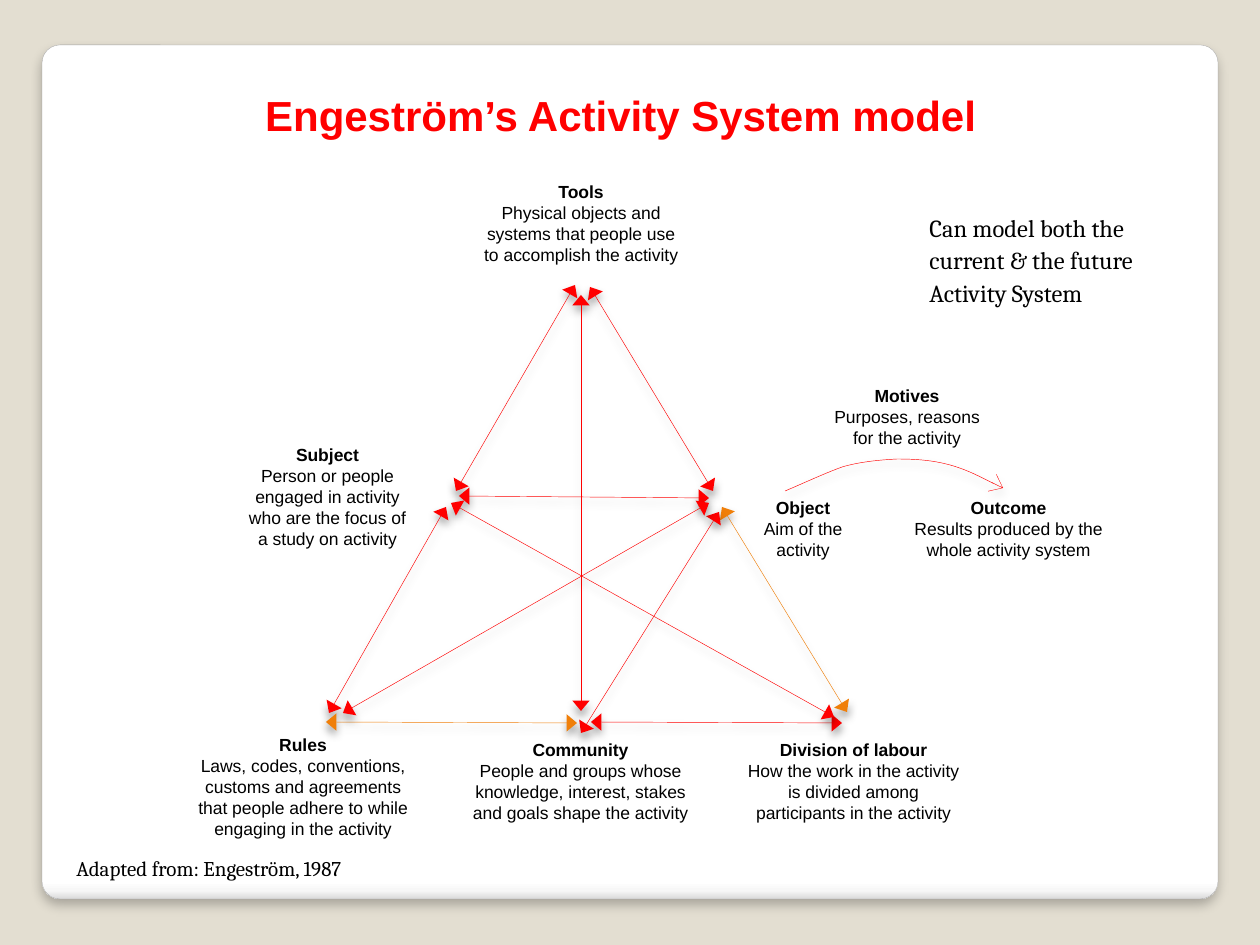
from typing import NamedTuple

from lxml import etree
from pptx import Presentation
from pptx.dml.color import RGBColor
from pptx.enum.shapes import MSO_CONNECTOR, MSO_SHAPE
from pptx.enum.text import MSO_ANCHOR, MSO_AUTO_SIZE, PP_ALIGN
from pptx.oxml.ns import qn
from pptx.util import Emu, Pt

STRAIGHT = MSO_CONNECTOR.STRAIGHT
ROUNDED = MSO_SHAPE.ROUNDED_RECTANGLE
TOP, BOTTOM = MSO_ANCHOR.TOP, MSO_ANCHOR.BOTTOM
GROW, FIXED = MSO_AUTO_SIZE.SHAPE_TO_FIT_TEXT, MSO_AUTO_SIZE.NONE
LEFT, CENTER = PP_ALIGN.LEFT, PP_ALIGN.CENTER

EMU_PER_PX = 914400 / 126
RED, ORANGE, BLACK = "FF0000", "F07F09", "000000"


class Area(NamedTuple):
    left: int
    top: int
    width: int
    height: int


class Label(NamedTuple):
    heading: str
    detail: str
    area: Area


class Link(NamedTuple):
    start: tuple[int, int]
    end: tuple[int, int]
    color: str = RED


LABELS = [
    Label("Subject", "Person or people engaged in activity who are the focus of a study on activity",
          Area(233, 438, 189, 111)),
    Label("Tools", "Physical objects and systems that people use to accomplish the activity",
          Area(470, 175, 222, 91)),
    Label("Object", "Aim of the activity", Area(730, 491, 146, 77)),
    Label("Outcome", "Results produced by the whole activity system", Area(901, 491, 215, 72)),
    Label("Division of labour",
          "How the work in the activity is divided among participants in the activity",
          Area(733, 733, 241, 91)),
    Label("Community",
          "People and groups whose knowledge, interest, stakes and goals shape the activity",
          Area(456, 733, 249, 91)),
    Label("Rules",
          "Laws, codes, conventions, customs and agreements that people adhere to while "
          "engaging in the activity",
          Area(184, 728, 238, 118)),
    Label("Motives", "Purposes, reasons for the activity", Area(811, 379, 192, 72)),
]

LINKS = [
    Link((575, 285), (456, 491)),
    Link((446, 507), (329, 713)),
    Link((590, 287), (713, 491)),
    Link((722, 507), (847, 712), ORANGE),
    Link((591, 722), (842, 723)),
    Link((719, 512), (581, 733)),
    Link((326, 722), (577, 723), ORANGE),
    Link((459, 496), (709, 498)),
    Link((581, 295), (581, 711)),
    Link((709, 503), (343, 713)),
    Link((451, 503), (834, 717)),
]

MOTIVE_CURVE = [
    (785, 491), (804, 483), (823, 474), (842, 467), (859, 462), (878, 460), (897, 459),
    (915, 459), (932, 460), (950, 465), (968, 470), (992, 483), (1003, 488),
]

CARD_STOPS = [(0, "FFFFFF"), (98, "FFFFFF"), (99, "F7F7F7"), (100, "DADADA")]


def px(length: int) -> Emu:
    return Emu(round(length * EMU_PER_PX))


def rgb(color: str) -> RGBColor:
    return RGBColor.from_string(color)


def add_child(parent, tag: str, **attributes):
    return etree.SubElement(parent, qn(tag), {key: str(value) for key, value in attributes.items()})


def set_shadow(shape, opacity: int, blur: float, distance: float) -> None:
    properties = shape._element.spPr
    for effects in properties.findall(qn("a:effectLst")):
        properties.remove(effects)
    effects = add_child(properties, "a:effectLst")
    shadow = add_child(effects, "a:outerShdw", blurRad=Pt(blur), dist=Pt(distance),
                       dir=90 * 60000, algn="t", rotWithShape=0)
    shade = add_child(shadow, "a:srgbClr", val=BLACK)
    add_child(shade, "a:alpha", val=opacity * 1000)


def set_line(shape, color: str, **arrowheads: str) -> None:
    shape.line.color.rgb = rgb(color)
    shape.line.width = Pt(0.25)
    outline = shape._element.spPr.find(qn("a:ln"))
    for end, kind in arrowheads.items():
        add_child(outline, f"a:{end}", type=kind, w="lg", len="med")
    set_shadow(shape, 40, 5.2, 3)


def add_card(page, area: Area) -> None:
    card = page.shapes.add_shape(ROUNDED, *map(px, area))
    card.adjustments[0] = 0.021
    card.fill.gradient()
    card.fill.gradient_angle = 270
    stops = card._element.spPr.find(qn("a:gradFill")).find(qn("a:gsLst"))
    for stop in list(stops):
        stops.remove(stop)
    for position, color in CARD_STOPS:
        add_child(add_child(stops, "a:gs", pos=position * 1000), "a:srgbClr", val=color)
    card.line.color.rgb = rgb("A4A4A4")
    card.line.width = Pt(0.16)
    set_shadow(card, 25, 6, 4)


def add_box(page, area: Area, auto_size=GROW, anchor=TOP):
    box = page.shapes.add_textbox(*map(px, area))
    frame = box.text_frame
    frame.word_wrap = True
    frame.auto_size = auto_size
    frame.vertical_anchor = anchor
    return frame


def write(para, text: str, *, size: int, font: str = "Arial", color: str = BLACK,
          bold: bool = False, align=LEFT, line_spacing: float = 1.0, before: float = 0) -> None:
    para.alignment = align
    para.line_spacing = line_spacing
    para.space_before = Pt(before)
    span = para.add_run()
    span.text = text
    span.font.size = Pt(size)
    span.font.name = font
    span.font.bold = bold
    span.font.color.rgb = rgb(color)


def add_label(page, label: Label) -> None:
    frame = add_box(page, label.area)
    write(frame.paragraphs[0], label.heading, size=10, bold=True, align=CENTER)
    write(frame.add_paragraph(), label.detail, size=10, align=CENTER)


def add_link(page, link: Link) -> None:
    line = page.shapes.add_connector(STRAIGHT, *map(px, link.start + link.end))
    set_line(line, link.color, headEnd="triangle", tailEnd="triangle")


def add_curve(page, points: list[tuple[int, int]]) -> None:
    builder = page.shapes.build_freeform(*points[0], scale=EMU_PER_PX)
    builder.add_line_segments(points[1:], close=False)
    curve = builder.convert_to_shape()
    outline = next(curve._element.iter(qn("a:path")))
    segments = outline.findall(qn("a:lnTo"))
    for first in range(0, len(segments), 3):
        bezier = add_child(outline, "a:cubicBezTo")
        for segment in segments[first:first + 3]:
            bezier.append(segment[0])
            outline.remove(segment)
    curve.fill.background()
    set_line(curve, RED, tailEnd="arrow")


def main() -> None:
    deck = Presentation()
    deck.slide_width, deck.slide_height = px(1260), px(945)
    page = deck.slides.add_slide(deck.slide_layouts[6])
    page.background.fill.solid()
    page.background.fill.fore_color.rgb = rgb("E3DED1")

    add_card(page, Area(42, 45, 1176, 854))
    for label in LABELS:
        add_label(page, label)
    add_curve(page, MOTIVE_CURVE)
    for link in LINKS:
        add_link(page, link)

    title = add_box(page, Area(-5, 52, 1265, 152), FIXED, BOTTOM)
    title.margin_right, title.margin_bottom = px(26), px(64)
    write(title.paragraphs[0], "Engeström’s Activity System model", size=24, color=RED,
          bold=True, align=CENTER, line_spacing=1.3)
    note = add_box(page, Area(917, 204, 277, 110))
    write(note.paragraphs[0], "Can model both the current & the future Activity System",
          size=14, font="Cambria", line_spacing=1.1, before=2.8)
    credit = add_box(page, Area(64, 849, 1201, 38))
    write(credit.paragraphs[0], "Adapted from: Engeström, 1987", size=12, font="Cambria", before=2.4)
    deck.save("out.pptx")


if __name__ == "__main__":
    main()
